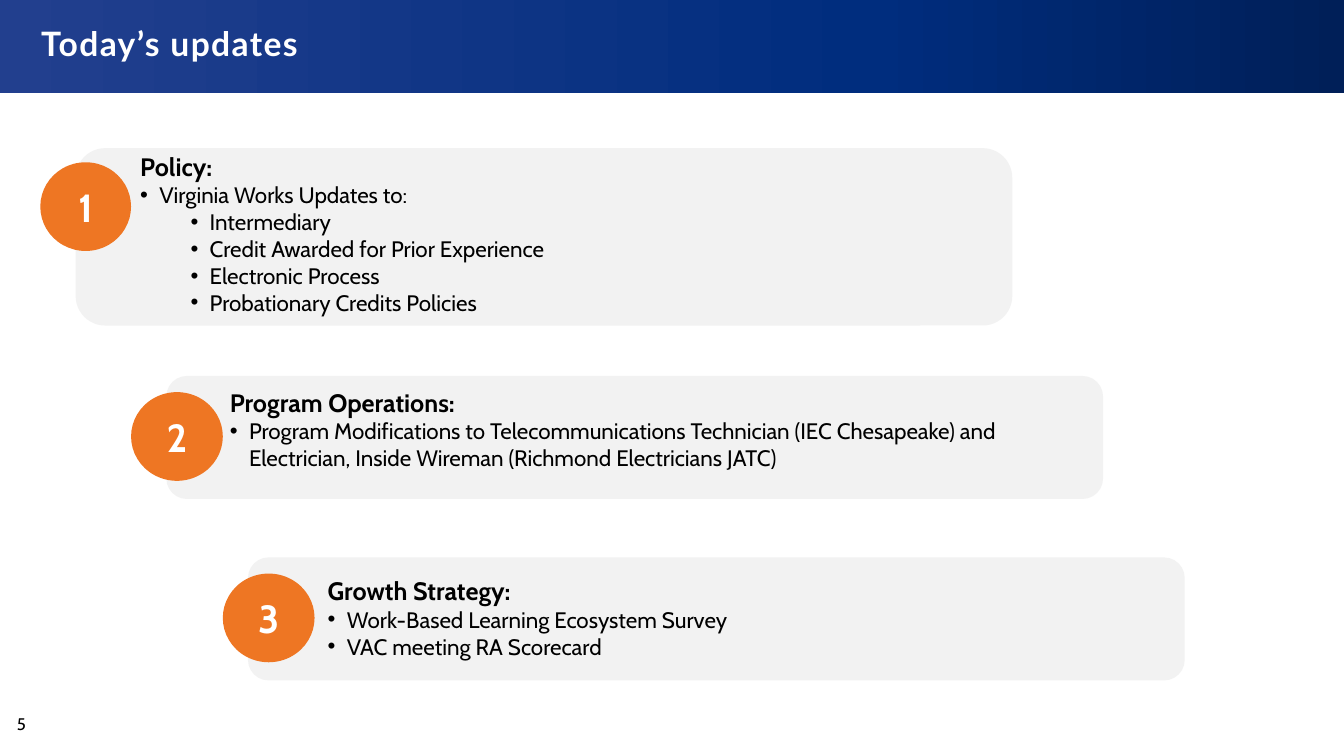
import copy

import pptx
import pptx.dml.color
import pptx.enum.shapes
import pptx.enum.text
import pptx.oxml
import pptx.oxml.ns
import pptx.util

RGBColor = pptx.dml.color.RGBColor
SHAPE = pptx.enum.shapes.MSO_SHAPE
ANCHOR = pptx.enum.text.MSO_ANCHOR
ALIGN = pptx.enum.text.PP_ALIGN
GROW = pptx.enum.text.MSO_AUTO_SIZE.SHAPE_TO_FIT_TEXT
qn = pptx.oxml.ns.qn

PX = 9144
BLACK = RGBColor(0x00, 0x00, 0x00)
WHITE = RGBColor(0xFF, 0xFF, 0xFF)
GREY = RGBColor(0xF2, 0xF2, 0xF2)
ORANGE = RGBColor(0xEE, 0x76, 0x23)
NAVY = RGBColor(0x00, 0x1F, 0x58)
BLUE = RGBColor(0x00, 0x2D, 0x7E)
INDIGO = RGBColor(0x22, 0x3F, 0x8E)
BANNER_STOPS = [(0, NAVY), (0.35, BLUE), (1, INDIGO)]

TITLE = {"name": "Lato", "size": 24, "bold": True, "color": WHITE}
NUMBER = {"name": "Cabin", "size": 28, "bold": True, "color": WHITE}
HEADING = {"name": "Cabin", "size": 18, "bold": True, "color": BLACK}
BODY = {"name": "Cabin", "size": 16, "bold": False, "color": BLACK}
PAGE = {"name": "Cabin", "size": 12, "bold": False, "color": BLACK}

SECTIONS = [
    {
        "card": (75, 147, 929, 176),
        "circle": (40, 161, 90, 88),
        "text": (139, 150, 860, 165),
        "heading": "Policy:",
        "bullets": [
            (0, "Virginia Works Updates to:"),
            (1, "Intermediary"),
            (1, "Credit Awarded for Prior Experience"),
            (1, "Electronic Process"),
            (1, "Probationary Credits Policies"),
        ],
    },
    {
        "card": (165, 373, 929, 122),
        "circle": (130, 389, 91, 88),
        "text": (228, 384, 827, 84),
        "heading": "Program Operations:",
        "bullets": [
            (0, "Program Modifications to Telecommunications Technician (IEC Chesapeake) and "
                "Electrician, Inside Wireman (Richmond Electricians JATC)"),
        ],
    },
    {
        "card": (246, 553, 929, 122),
        "circle": (221, 569, 91, 88),
        "text": (325, 571, 827, 84),
        "heading": "Growth Strategy:",
        "bullets": [
            (0, "Work-Based Learning Ecosystem Survey"),
            (0, "VAC meeting RA Scorecard"),
        ],
    },
]


def emu(box):
    return [v * PX for v in box]


def add_run(p, text, fmt):
    r = p.add_run()
    r.text = text
    for key, value in fmt.items():
        if key == "color":
            r.font.color.rgb = value
        else:
            setattr(r.font, key, pptx.util.Pt(value) if key == "size" else value)
    return r


def add_panel(shapes, kind, box, color=None):
    sp = shapes.add_shape(kind, *emu(box))
    sp.shadow.inherit = False
    sp.line.fill.background()
    if color is not None:
        sp.fill.solid()
        sp.fill.fore_color.rgb = color
    return sp


def add_banner(shapes):
    sp = add_panel(shapes, SHAPE.RECTANGLE, (0, 0, 1333, 92))
    sp.fill.gradient()
    sp.fill.gradient_angle = 180
    stops = sp._element.spPr.find(".//" + qn("a:gsLst"))
    stops.append(copy.deepcopy(stops[-1]))
    for stop, (position, color) in zip(sp.fill.gradient_stops, BANNER_STOPS):
        stop.position = position
        stop.color.rgb = color


def add_text(shapes, box, **frame):
    tf = shapes.add_textbox(*emu(box)).text_frame
    for key, value in {"word_wrap": True, **frame}.items():
        setattr(tf, key, value)
    return tf


def add_bullet(tf, level, text):
    p = tf.add_paragraph()
    p.level = level
    pPr = p._p.get_or_add_pPr()
    pPr.set("marL", str((19 + 50 * level) * PX))
    pPr.set("indent", str(-19 * PX))
    for tag, key, value in (("a:buFont", "typeface", "Arial"), ("a:buChar", "char", "•")):
        bu = pptx.oxml.parse_xml(f"<{tag} {pptx.oxml.ns.nsdecls('a')}/>")
        bu.set(key, value)
        pPr.append(bu)
    add_run(p, text, BODY)


def add_circle(shapes, box, number):
    sp = add_panel(shapes, SHAPE.OVAL, box, ORANGE)
    sp.text_frame.vertical_anchor = ANCHOR.MIDDLE
    p = sp.text_frame.paragraphs[0]
    p.alignment = ALIGN.CENTER
    add_run(p, str(number), NUMBER)


def add_section(shapes, number, section):
    add_panel(shapes, SHAPE.ROUNDED_RECTANGLE, section["card"], GREY)
    group = shapes.add_group_shape()
    tf = add_text(group.shapes, section["text"], auto_size=GROW, margin_left=0,
                  margin_top=0, margin_right=0, margin_bottom=0)
    add_run(tf.paragraphs[0], section["heading"], HEADING)
    for level, text in section["bullets"]:
        add_bullet(tf, level, text)
    add_circle(group.shapes, section["circle"], number)


def main():
    prs = pptx.Presentation()
    prs.slide_width, prs.slide_height = emu((1333, 750))
    s = prs.slides.add_slide(prs.slide_layouts[6])
    add_banner(s.shapes)

    p = add_text(s.shapes, (31, 20, 1271, 51), vertical_anchor=ANCHOR.MIDDLE).paragraphs[0]
    p.line_spacing = 0.9
    r = add_run(p, "Today’s updates", TITLE)
    r._r.get_or_add_rPr().set("spc", "100")

    for number, section in enumerate(SECTIONS, 1):
        add_section(s.shapes, number, section)

    tf = add_text(s.shapes, (7, 703, 60, 30), auto_size=GROW)
    add_run(tf.paragraphs[0], "5", PAGE)
    prs.save("out.pptx")


if __name__ == "__main__":
    main()
